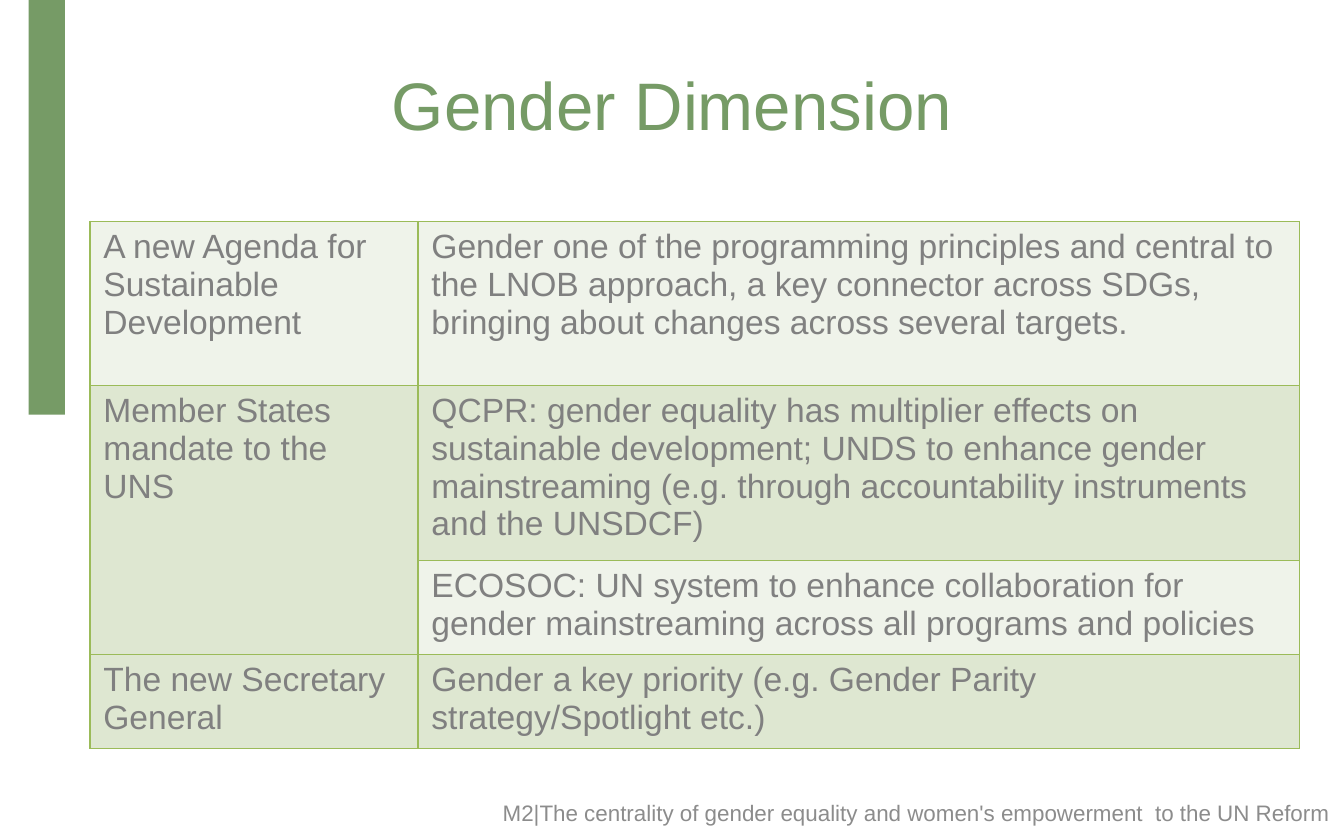
from lxml import etree
from pptx import Presentation
from pptx.dml.color import RGBColor
from pptx.enum.shapes import MSO_SHAPE
from pptx.enum.text import MSO_ANCHOR, PP_ALIGN
from pptx.oxml.ns import qn
from pptx.util import Cm, Pt

RECTANGLE = MSO_SHAPE.RECTANGLE
MIDDLE = MSO_ANCHOR.MIDDLE
CENTER, RIGHT, LEFT = PP_ALIGN.CENTER, PP_ALIGN.RIGHT, PP_ALIGN.LEFT

GREEN, GRID, PALE, SOFT = "769B66", "9BBB59", "EFF3EA", "DEE7D1"
BORDER_SIDES = ("a:lnL", "a:lnR", "a:lnT", "a:lnB")

HEADINGS = [
    ("Gender Dimension", (1.27, 0.64, 22.86, 2.64), CENTER,
     {"size": Pt(36)}, GREEN),
    ("M2|The centrality of gender equality and women's empowerment  to the UN Reform",
     (9.2, 14.85, 16.2, 1.03), RIGHT, {"size": Pt(12)}, "8C8C8C"),
]
DIMENSIONS = [
    ("A new Agenda for Sustainable Development",
     "Gender one of the programming principles and central to the LNOB approach, "
     "a key connector across SDGs, bringing about changes across several targets.",
     PALE, 3.1),
    ("Member States mandate to the UNS",
     "QCPR: gender equality has multiplier effects on sustainable development; "
     "UNDS to enhance gender mainstreaming (e.g. through accountability "
     "instruments and the UNSDCF)",
     SOFT, 3.1),
    (None,
     "ECOSOC: UN system to enhance collaboration for gender mainstreaming "
     "across all programs and policies",
     PALE, 1.68),
    ("The new Secretary General",
     "Gender a key priority (e.g. Gender Parity strategy/Spotlight etc.)",
     SOFT, 1.68),
]
COLUMN_WIDTHS = (6.2, 16.66)


def color(value):
    return RGBColor.from_string(value)


def write(frame, text, align, font_format, ink):
    paragraph = frame.paragraphs[0]
    paragraph.alignment = align
    run = paragraph.add_run()
    run.text = text
    for attribute, value in {"name": "Arial", **font_format}.items():
        setattr(run.font, attribute, value)
    run.font.color.rgb = color(ink)


def paint(fill, value):
    fill.solid()
    fill.fore_color.rgb = color(value)


def outline(cell):
    properties = cell._tc.get_or_add_tcPr()
    for position, side in enumerate(BORDER_SIDES):
        line = etree.Element(qn(side), w=str(Pt(1)))
        solid = etree.SubElement(line, qn("a:solidFill"))
        etree.SubElement(solid, qn("a:srgbClr"), val=GRID)
        properties.insert(position, line)


def add_heading(slide, text, box, align, font_format, ink):
    frame = slide.shapes.add_textbox(*map(Cm, box)).text_frame
    for attribute, value in {"word_wrap": True, "vertical_anchor": MIDDLE}.items():
        setattr(frame, attribute, value)
    write(frame, text, align, font_format, ink)


def add_dimensions(slide):
    heights = [height for *_, height in DIMENSIONS]
    table = slide.shapes.add_table(
        len(DIMENSIONS), len(COLUMN_WIDTHS), Cm(1.7), Cm(4.19),
        Cm(sum(COLUMN_WIDTHS)), Cm(sum(heights))).table
    for flag in ("first_row", "horz_banding"):
        setattr(table, flag, False)
    for column, width in zip(table.columns, COLUMN_WIDTHS):
        column.width = Cm(width)
    for index, (theme, detail, shade, height) in enumerate(DIMENSIONS):
        table.rows[index].height = Cm(height)
        for cell, text in zip(table.rows[index].cells, (theme, detail)):
            paint(cell.fill, shade)
            outline(cell)
            if text:
                write(cell.text_frame, text, LEFT, {"size": Pt(18)}, "808080")
        if theme is None:
            table.cell(index - 1, 0).merge(table.cell(index, 0))


def main():
    deck = Presentation()
    deck.slide_width, deck.slide_height = Cm(25.4), Cm(15.88)
    slide = deck.slides.add_slide(deck.slide_layouts[6])
    accent = slide.shapes.add_shape(RECTANGLE, Cm(0.54), Cm(0), Cm(0.69), Cm(7.84))
    accent.shadow.inherit = False
    paint(accent.fill, GREEN)
    accent.line.fill.background()
    for heading in HEADINGS:
        add_heading(slide, *heading)
    add_dimensions(slide)
    deck.save("out.pptx")


if __name__ == "__main__":
    main()
